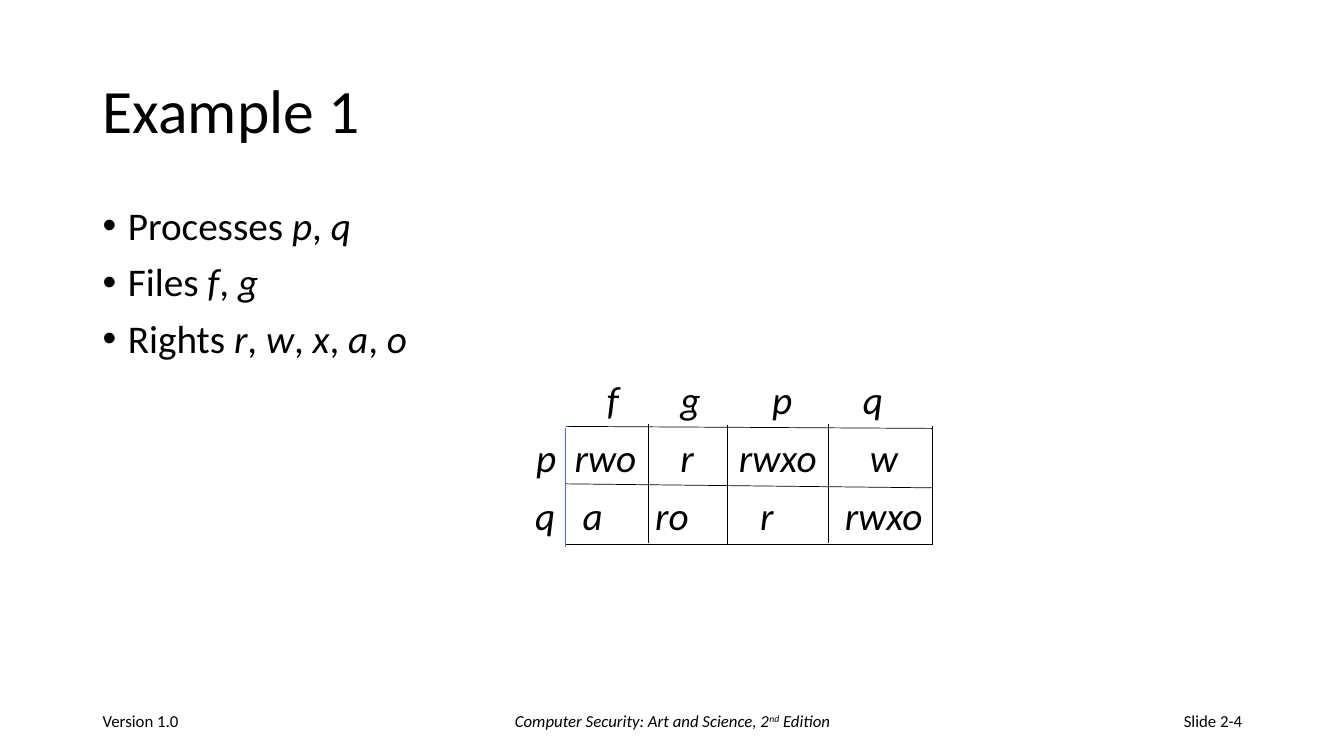
from pptx import Presentation
from pptx.dml.color import RGBColor
from pptx.enum.shapes import MSO_CONNECTOR
from pptx.enum.text import MSO_ANCHOR, PP_ALIGN
from pptx.oxml.ns import qn
from pptx.util import Emu, Pt
from lxml.etree import SubElement

SCALE = 9144  # EMU per px, 100 px to the inch
COLORS = {"text": "000000", "rule": "000000", "left_rule": "4472C4"}


def px(n):
    return Emu(n * SCALE)


class SlideBuilder:
    def __init__(self, prs, font="Calibri"):
        self.s = prs.slides.add_slide(prs.slide_layouts[6])
        self.font = font

    def text(self, box, *lines, size=28, italic=False, align=PP_ALIGN.LEFT,
             anchor=MSO_ANCHOR.TOP, spacing=None, before=0, bullet=False, tabs=()):
        """Each line may mark italic parts as *part* and superscripts as ^part^."""
        tf = self.s.shapes.add_textbox(*map(px, box)).text_frame
        tf.word_wrap = True
        tf.vertical_anchor = anchor
        for i, line in enumerate(lines):
            p = tf.paragraphs[0] if i == 0 else tf.add_paragraph()
            p.alignment = align
            if spacing:
                p.line_spacing = spacing
            if i and before:
                p.space_before = Pt(before)
            pPr = p._p.get_or_add_pPr()
            if bullet:
                self.bullet(pPr)
            if tabs:
                self.tabs(pPr, tabs)
            for j, part in enumerate(line.split("*")):
                for k, piece in enumerate(part.split("^")):
                    if piece:
                        self.run(p, piece, size, italic or j % 2 == 1, k % 2 == 1)

    def run(self, p, text, size, italic, superscript):
        r = p.add_run()
        r.text = text
        r.font.name = self.font
        r.font.size = Pt(size)
        r.font.italic = italic
        r.font.color.rgb = RGBColor.from_string(COLORS["text"])
        if superscript:
            r.font._rPr.set("baseline", "30000")

    def bullet(self, pPr, indent=25):
        pPr.set("marL", str(px(indent)))
        pPr.set("indent", str(px(-indent)))
        SubElement(pPr, qn("a:buFont"), typeface="Arial")
        SubElement(pPr, qn("a:buChar"), char="•")

    def tabs(self, pPr, stops):
        tab_list = SubElement(pPr, qn("a:tabLst"))
        for stop in stops:
            SubElement(tab_list, qn("a:tab"), pos=str(px(stop)), algn="l")

    def line(self, x1, y1, x2, y2, color="rule"):
        c = self.s.shapes.add_connector(MSO_CONNECTOR.STRAIGHT, *map(px, (x1, y1, x2, y2)))
        c.line.width = Pt(0.5)
        c.line.color.rgb = RGBColor.from_string(COLORS[color])
        SubElement(c._element.spPr, qn("a:effectLst"))


def main():
    prs = Presentation()
    prs.slide_width, prs.slide_height = px(1333), px(750)
    slide = SlideBuilder(prs)

    slide.text((92, 40, 1150, 145), "Example 1", size=44, spacing=0.9,
               anchor=MSO_ANCHOR.MIDDLE)
    slide.text((92, 200, 1150, 476), "Processes *p*, *q*", "Files *f*, *g*",
               "Rights *r*, *w*, *x*, *a*, *o*", spacing=0.9, before=10, bullet=True)

    footers = [
        (92, 300, "Version 1.0", PP_ALIGN.LEFT, False),
        (442, 450, "Computer Security: Art and Science, 2^nd^ Edition", PP_ALIGN.CENTER, True),
        (942, 300, "Slide 2-4", PP_ALIGN.RIGHT, False),
    ]
    for x, width, label, align, italic in footers:
        slide.text((x, 695, width, 40), label, size=12, italic=italic, align=align,
                   anchor=MSO_ANCHOR.MIDDLE)

    # Access control matrix: left, width, entries, tab stops
    matrix_rows = [
        (592, 319, "f g p q", (73, 164, 254)),
        (522, 380, "p rwo r rwxo w", (38, 143, 201, 331)),
        (521, 421, "q a ro r rwxo", (47, 119, 223, 307)),
    ]
    for i, (x, width, entries, stops) in enumerate(matrix_rows):
        slide.text((x, 367 + 58 * i, width, 57), "\t".join(entries.split()),
                   italic=True, tabs=stops)

    left, right, height = 561, 925, 118
    for y1, y2 in [(423, 425), (480, 484), (540, 540)]:
        slide.line(left, y1, right, y2)
    slide.line(left, 425, left, 425 + height, "left_rule")
    for x, top in [(643, 421), (721, 422), (822, 421), (right, 423)]:
        slide.line(x, top, x, top + height)

    prs.save("out.pptx")


if __name__ == "__main__":
    main()
